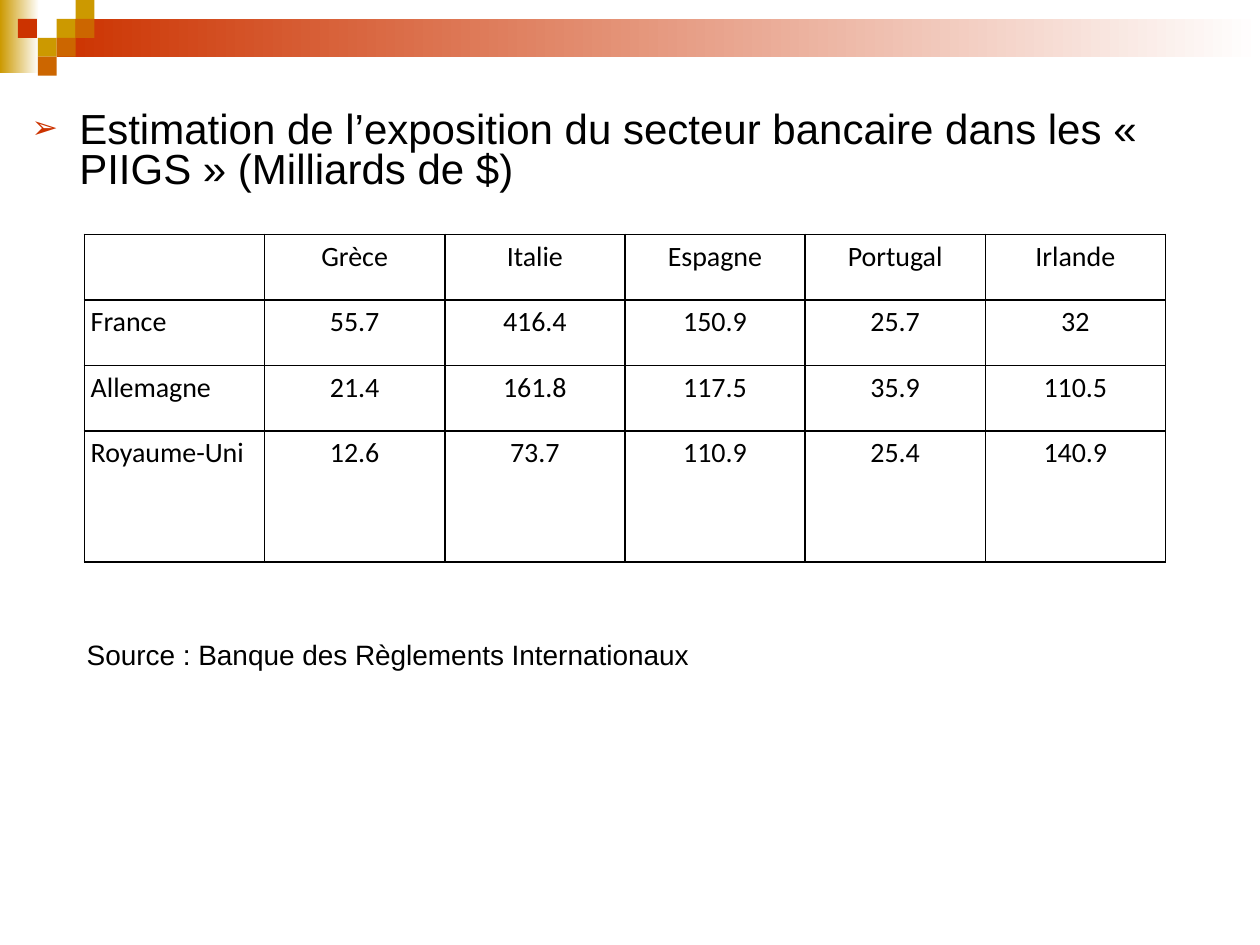
from typing import NamedTuple

from lxml import etree
from pptx import Presentation
from pptx.dml.color import RGBColor
from pptx.enum.shapes import MSO_SHAPE
from pptx.enum.text import MSO_AUTO_SIZE, PP_ALIGN
from pptx.oxml.ns import qn
from pptx.util import Inches, Pt

RECTANGLE = MSO_SHAPE.RECTANGLE
LEFT, CENTER = PP_ALIGN.LEFT, PP_ALIGN.CENTER
NO_FIT = MSO_AUTO_SIZE.NONE

COLORS = {
    "gold": "CC9900",
    "red": "CC3300",
    "orange": "CC6600",
    "white": "FFFFFF",
    "black": "000000",
}
TILE = 0.15  # side of one mosaic square, in inches


class Tile(NamedTuple):
    """A block of the banner, in mosaic columns and rows."""
    column: float
    row: float
    color: str
    columns: float = 1
    rows: float = 1
    fades: bool = False


BANNER = [
    Tile(0, 0, "gold", 2.07, 3.87, fades=True),
    Tile(3, 1, "red", 63.67, 2, fades=True),
    Tile(3, 1, "gold"),
    Tile(4, 0, "gold"),
    Tile(4, 1, "orange"),
    Tile(2, 2, "gold"),
    Tile(0.95, 1, "red"),
    Tile(3, 2, "orange"),
    Tile(2, 3, "orange"),
]

EXPOSURE = [
    ["", "Grèce", "Italie", "Espagne", "Portugal", "Irlande"],
    ["France", "55.7", "416.4", "150.9", "25.7", "32"],
    ["Allemagne", "21.4", "161.8", "117.5", "35.9", "110.5"],
    ["Royaume-Uni", "12.6", "73.7", "110.9", "25.4", "140.9"],
]
COLUMN_WIDTH, ROW_HEIGHT = 1.43, 0.52
ROW_SPANS = [1, 1, 1, 2]


def rgb(color: str) -> RGBColor:
    return RGBColor.from_string(COLORS[color])


def write(frame, text: str, *, size: float, font: str = "Arial",
          color: str = "black", align=LEFT, spacing: float = 1.0):
    paragraph = frame.paragraphs[0]
    paragraph.alignment = align
    paragraph.line_spacing = spacing
    run = paragraph.add_run()
    run.text = text
    run.font.size = Pt(size)
    run.font.name = font
    run.font.color.rgb = rgb(color)
    return paragraph


def draw_tile(slide, tile: Tile) -> None:
    box = (tile.column, tile.row, tile.columns, tile.rows)
    block = slide.shapes.add_shape(RECTANGLE, *(Inches(n * TILE) for n in box))
    block.shadow.inherit = False
    block.line.fill.background()
    if tile.fades:
        block.fill.gradient()
        block.fill.gradient_angle = 0
        for stop, color in zip(block.fill.gradient_stops, (tile.color, "white")):
            stop.color.rgb = rgb(color)
    else:
        block.fill.solid()
        block.fill.fore_color.rgb = rgb(tile.color)


def add_bullet(paragraph, char: str, color: str, percent: int, indent: float) -> None:
    properties = paragraph._p.get_or_add_pPr()
    properties.set("marL", str(Inches(indent)))
    properties.set("indent", str(-Inches(indent)))
    tint = etree.SubElement(properties, qn("a:buClr"))
    etree.SubElement(tint, qn("a:srgbClr"), val=COLORS[color])
    etree.SubElement(properties, qn("a:buSzPct"), val=str(percent * 1000))
    etree.SubElement(properties, qn("a:buFont"), typeface="Arial")
    etree.SubElement(properties, qn("a:buChar"), char=char)


def add_borders(cell, color: str, width: float) -> None:
    properties = cell._tc.get_or_add_tcPr()
    for side in ("lnL", "lnR", "lnT", "lnB"):
        line = etree.SubElement(properties, qn(f"a:{side}"), w=str(Pt(width)))
        fill = etree.SubElement(line, qn("a:solidFill"))
        etree.SubElement(fill, qn("a:srgbClr"), val=COLORS[color])


def draw_exposure(slide, left: float, top: float) -> None:
    columns = len(EXPOSURE[0])
    table = slide.shapes.add_table(
        len(EXPOSURE), columns, Inches(left), Inches(top),
        Inches(columns * COLUMN_WIDTH), Inches(sum(ROW_SPANS) * ROW_HEIGHT)).table
    table.first_row = table.horz_banding = False
    for column in table.columns:
        column.width = Inches(COLUMN_WIDTH)
    for row, span in zip(table.rows, ROW_SPANS):
        row.height = Inches(span * ROW_HEIGHT)
    for r, values in enumerate(EXPOSURE):
        for c, value in enumerate(values):
            cell = table.cell(r, c)
            cell.margin_left = cell.margin_right = Inches(0.05)
            cell.margin_top = cell.margin_bottom = 0
            add_borders(cell, "black", 1)
            cell.fill.background()
            if value:
                write(cell.text_frame, value, size=16, font="Calibri",
                      align=CENTER if c else LEFT, spacing=1.15)


def main() -> None:
    deck = Presentation()
    deck.slide_width, deck.slide_height = Inches(10), Inches(7.5)
    slide = deck.slides.add_slide(deck.slide_layouts[1])
    title = slide.shapes.title._element
    title.getparent().remove(title)

    # Banner
    for tile in BANNER:
        draw_tile(slide, tile)

    # Heading
    heading = slide.placeholders[1]
    heading.left, heading.top = Inches(0.15), Inches(0.84)
    heading.width, heading.height = Inches(9.85), Inches(3.92)
    heading.text_frame.auto_size = NO_FIT
    statement = write(
        heading.text_frame,
        "Estimation de l’exposition du secteur bancaire dans les "
        "« PIIGS » (Milliards de $)", size=24, spacing=0.8)
    statement.space_before = Pt(5)
    add_bullet(statement, "➢", "red", 75, 0.38)

    # Exposure table
    draw_exposure(slide, 0.67, 1.86)

    # Source line
    source = slide.shapes.add_textbox(
        Inches(0.59), Inches(5.01), Inches(5.04), Inches(0.37))
    source.text_frame.word_wrap = False
    write(source.text_frame, "Source : Banque des Règlements Internationaux", size=16)

    deck.save("out.pptx")


if __name__ == "__main__":
    main()
